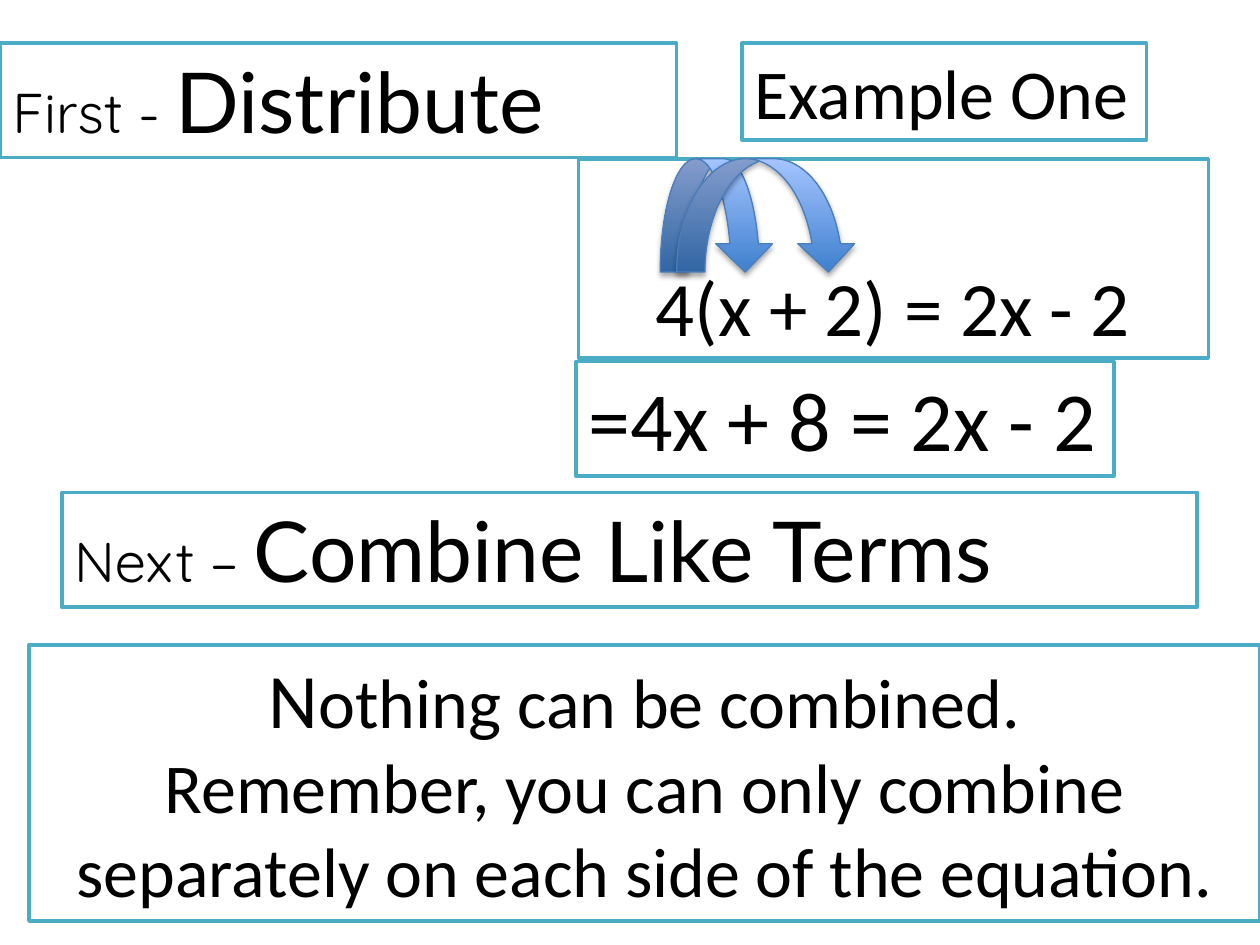
import pptx
import pptx.util
import pptx.dml.color
import pptx.enum.shapes
import pptx.enum.text
from lxml import etree

Inch = pptx.util.Inches
Pt = pptx.util.Pt
ALIGN = pptx.enum.text.PP_ALIGN
ANCHOR = pptx.enum.text.MSO_ANCHOR
NS = "http://schemas.openxmlformats.org/drawingml/2006/main"

WIDE, HIGH = 10, 7.5
ROW = 0.91  # height of a one-line step
TOP = 0.34
EQ_TOP = 1.26


def color(code):
    return pptx.dml.color.RGBColor.from_string(code)


def write(para, text, size=40, font="Calibri", ink="000000"):
    run = para.add_run()
    run.text = text
    run.font.size = Pt(size)
    run.font.name = font
    run.font.color.rgb = color(ink)


def panel(slide, place, lines, wrap=False, align=ALIGN.LEFT, anchor=ANCHOR.TOP):
    """Framed box; each line is a list of (text, format) pairs."""
    box = slide.shapes.add_textbox(*map(Inch, place))
    box.fill.solid()
    box.fill.fore_color.rgb = color("FFFFFF")
    box.line.color.rgb = color("4BACC6")
    box.line.width = Pt(2)
    frame = box.text_frame
    frame.word_wrap = wrap
    frame.vertical_anchor = anchor
    if not wrap:
        frame.auto_size = pptx.enum.text.MSO_AUTO_SIZE.SHAPE_TO_FIT_TEXT
    for n, line in enumerate(lines):
        para = frame.add_paragraph() if n else frame.paragraphs[0]
        para.alignment = align
        for text, form in line:
            write(para, text, **form)


def step(slide, place, lead, name):
    panel(slide, place, [[(lead, {"size": 32, "font": "Quicksand"}),
                          (name, {"size": 48, "font": "Lato"})]])


def shade(shape):
    """Soft shadow straight below the shape."""
    shape.shadow.inherit = False
    effects = shape.element.spPr.find(f"{{{NS}}}effectLst")
    outer = etree.SubElement(effects, f"{{{NS}}}outerShdw", blurRad="40000",
                             dist="23000", dir="5400000", rotWithShape="0")
    tint = etree.SubElement(outer, f"{{{NS}}}srgbClr", val="000000")
    etree.SubElement(tint, f"{{{NS}}}alpha", val="35000")


def arc(slide, place):
    kind = pptx.enum.shapes.MSO_SHAPE.CURVED_DOWN_ARROW
    arrow = slide.shapes.add_shape(kind, *map(Inch, place))
    arrow.fill.gradient()
    arrow.fill.gradient_angle = 90
    for stop, code in zip(arrow.fill.gradient_stops, ("3F80CE", "A4C4FF")):
        stop.color.rgb = color(code)
    arrow.line.color.rgb = color("4B7EBC")
    arrow.line.width = Pt(0.75)
    shade(arrow)


def main():
    deck = pptx.Presentation()
    deck.slide_width, deck.slide_height = Inch(WIDE), Inch(HIGH)
    slide = deck.slides.add_slide(deck.slide_layouts[6])

    step(slide, (0, TOP, 5.37, ROW), "First - ", "Distribute")
    panel(slide, (4.57, 2.87, 4.27, ROW), [[("=4x + 8 = 2x - 2", {"size": 48})]])
    panel(slide, (4.59, EQ_TOP, WIDE / 2, 1.58),
          [[("4(x + 2) = 2x - 2", {"size": 44})]],
          wrap=True, align=ALIGN.CENTER, anchor=ANCHOR.BOTTOM)
    for left, width in ((5.24, 0.9), (5.37, 1.43)):
        arc(slide, (left, EQ_TOP, width, 0.9))
    step(slide, (0.49, 3.91, 9.01, ROW), "Next – ", "Combine Like Terms")
    panel(slide, (0.23, 5.12, WIDE - 0.23, 2.19),
          [[("N", {"size": 44}), ("othing can be combined.", {})],
           [("Remember, you can only combine separately "
             "on each side of the equation.", {})]],
          wrap=True, align=ALIGN.CENTER)
    panel(slide, (5.89, TOP, 3.21, 0.77), [[("Example One", {})]])

    deck.save("out.pptx")


if __name__ == "__main__":
    main()
